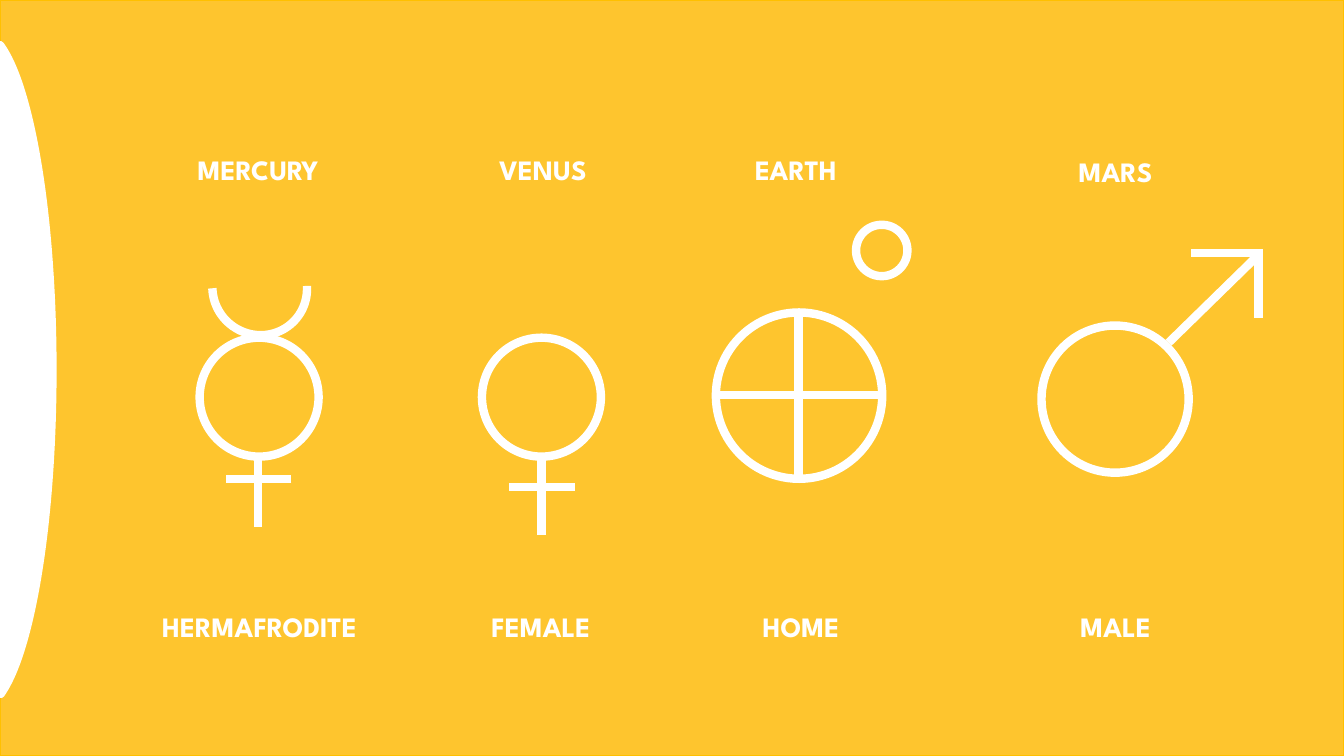
from dataclasses import dataclass

from pptx import Presentation
from pptx.dml.color import RGBColor
from pptx.enum import shapes, text
from pptx.oxml.ns import qn
from pptx.util import Inches, Pt
from lxml import etree

YELLOW = RGBColor(0xFE, 0xC5, 0x2E)
GOLD = RGBColor(0xFF, 0xC0, 0x00)
WHITE = RGBColor(0xFF, 0xFF, 0xFF)
FONT = "League Spartan"
STROKE = 6
MEANING_TOP = 6


@dataclass
class Ring:
    left: float
    top: float
    size: float


@dataclass
class Stroke:
    x1: float
    y1: float
    x2: float
    y2: float


@dataclass
class Label:
    text: str
    left: float
    top: float
    width: float = 1.27


@dataclass
class Planet:
    name: Label
    meaning: Label
    rings: list[Ring]
    strokes: list[Stroke]


PLANETS = [
    Planet(Label("MERCURY", 1.69, 1.46, 1.74),
           Label("HERMAFRODITE", 1.31, MEANING_TOP, 2.53),
           [Ring(1.98, 3.35, 1.18)],
           [Stroke(2.56, 5.23, 2.56, 4.49), Stroke(2.89, 4.75, 2.24, 4.75)]),
    Planet(Label("VENUS", 4.75, 1.46),
           Label("FEMALE", 4.73, MEANING_TOP),
           [Ring(4.78, 3.35, 1.18)],
           [Stroke(5.37, 5.31, 5.37, 4.56), Stroke(5.7, 4.83, 5.05, 4.83)]),
    Planet(Label("EARTH", 7.26, 1.46),
           Label("HOME", 7.31, MEANING_TOP),
           [Ring(7.1, 3.1, 1.65), Ring(8.49, 2.23, 0.51)],
           [Stroke(7.1, 3.92, 8.75, 3.92), Stroke(7.92, 4.75, 7.92, 3.1)]),
    Planet(Label("MARS", 10.43, 1.48),
           Label("MALE", 10.43, MEANING_TOP),
           [Ring(10.33, 3.23, 1.46)],
           [Stroke(12.48, 2.53, 11.59, 3.4), Stroke(12.5, 2.51, 11.81, 2.51),
            Stroke(12.48, 2.47, 12.48, 3.15)]),
]


def add_preset(s, kind, left: float, top: float, width: float, height: float, *,
               fill: RGBColor | None = None, line: RGBColor = WHITE,
               weight: float = STROKE, adj: tuple[float, ...] = ()):
    sp = s.shapes.add_shape(kind, Inches(left), Inches(top), Inches(width), Inches(height))
    sp.shadow.inherit = False
    if fill is None:
        sp.fill.background()
    else:
        sp.fill.solid()
        sp.fill.fore_color.rgb = fill
    sp.line.color.rgb = line
    sp.line.width = Pt(weight)
    for i, value in enumerate(adj):
        sp.adjustments[i] = value
    return sp


def add_stroke(s, stroke: Stroke) -> None:
    ends = (Inches(v) for v in (stroke.x1, stroke.y1, stroke.x2, stroke.y2))
    cxn = s.shapes.add_connector(shapes.MSO_CONNECTOR.STRAIGHT, *ends)
    cxn.line.color.rgb = WHITE
    cxn.line.width = Pt(STROKE)
    etree.SubElement(cxn._element.spPr, qn("a:effectLst"))


def add_text(s, content: str, left: float, top: float, width: float, *,
             height: float = 0.44, size: float = 20, bold: bool = True,
             color: RGBColor = WHITE) -> None:
    tf = s.shapes.add_textbox(Inches(left), Inches(top), Inches(width), Inches(height)).text_frame
    tf.word_wrap = True
    tf.auto_size = text.MSO_AUTO_SIZE.SHAPE_TO_FIT_TEXT
    p = tf.paragraphs[0]
    p.alignment = text.PP_ALIGN.CENTER
    r = p.add_run()
    r.text = content
    r.font.name = FONT
    r.font.size = Pt(size)
    r.font.bold = bold
    r.font.color.rgb = color


def add_planet(s, planet: Planet) -> None:
    for ring in planet.rings:
        add_preset(s, shapes.MSO_SHAPE.OVAL, ring.left, ring.top, ring.size, ring.size)
    for stroke in planet.strokes:
        add_stroke(s, stroke)
    for label in (planet.name, planet.meaning):
        add_text(s, label.text, label.left, label.top, label.width)


def main() -> None:
    prs = Presentation()
    prs.slide_width, prs.slide_height = Inches(13.33), Inches(7.5)
    s = prs.slides.add_slide(prs.slide_layouts[6])

    add_preset(s, shapes.MSO_SHAPE.RECTANGLE, 0, 0, 13.33, 7.5,
               fill=YELLOW, line=GOLD, weight=1)
    sun = add_preset(s, shapes.MSO_SHAPE.CHORD, -0.93, 0.31, 1.45, 6.72,
                     fill=WHITE, adj=(56.25, 159.8))
    sun._element.spPr.xfrm.set("flipH", "1")
    horns = add_preset(s, shapes.MSO_SHAPE.ARC, 2.11, 2.38, 0.93, 0.95, adj=(132.85, 25.8))
    horns.rotation = 136.4
    for planet in PLANETS:
        add_planet(s, planet)

    prs.save("out.pptx")


if __name__ == "__main__":
    main()
